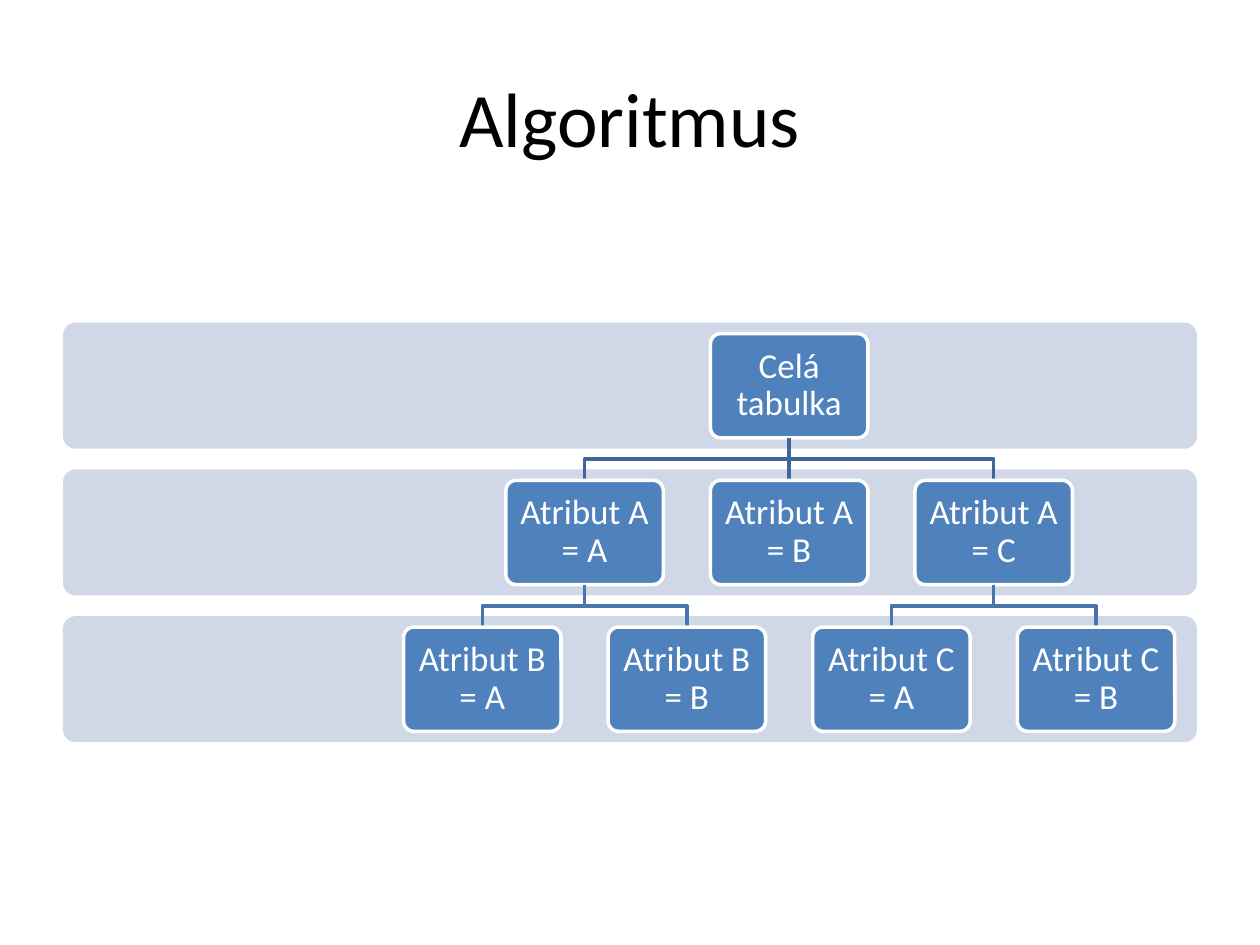
from lxml.etree import SubElement
from pptx import Presentation
from pptx.dml.color import RGBColor
from pptx.enum.shapes import MSO_CONNECTOR, MSO_SHAPE
from pptx.enum.text import MSO_ANCHOR, PP_ALIGN
from pptx.oxml.ns import qn
from pptx.util import Pt

TITLE = "Algoritmus"
NODES = [
    {"text": "Celá tabulka", "level": 0, "column": 1.5, "parent": None},
    {"text": "Atribut A = A", "level": 1, "column": 0.5, "parent": "Celá tabulka"},
    {"text": "Atribut B = A", "level": 2, "column": 0, "parent": "Atribut A = A"},
    {"text": "Atribut B = B", "level": 2, "column": 1, "parent": "Atribut A = A"},
    {"text": "Atribut A = B", "level": 1, "column": 1.5, "parent": "Celá tabulka"},
    {"text": "Atribut A = C", "level": 1, "column": 2.5, "parent": "Celá tabulka"},
    {"text": "Atribut C = A", "level": 2, "column": 2, "parent": "Atribut A = C"},
    {"text": "Atribut C = B", "level": 2, "column": 3, "parent": "Atribut A = C"},
]
LINK_COLORS = ["3F6797", "4875AC"]
LEVELS = 3
BAND_LEFT, BAND_TOP, BAND_WIDTH, BAND_HEIGHT = 36, 184.4, 648, 72
LEVEL_STEP = 83.85
NODE_WIDTH, NODE_HEIGHT = 90, 59.6
FIRST_CENTER, COLUMN_STEP = 275.6, 116.9
FRAME_FORMAT = {
    "word_wrap": True, "vertical_anchor": MSO_ANCHOR.MIDDLE,
    "margin_left": Pt(5.7), "margin_right": Pt(5.7),
    "margin_top": Pt(5.7), "margin_bottom": Pt(5.7),
}


def color(value):
    return RGBColor.from_string(value)


def set_values(target, values):
    for name, value in values.items():
        setattr(target, name, value)


def write_text(frame, text, size, ink, spacing=None):
    para = frame.paragraphs[0]
    set_values(para, {"alignment": PP_ALIGN.CENTER, "line_spacing": spacing})
    span = para.add_run()
    span.text = text
    set_values(span.font, {"name": "Calibri", "size": Pt(size)})
    span.font.color.rgb = color(ink)


def style_line(line, ink):
    line.color.rgb = color(ink)
    line.width = Pt(2)


def add_rounded(page, left, top, width, height, fill):
    box = page.shapes.add_shape(
        MSO_SHAPE.ROUNDED_RECTANGLE, Pt(left), Pt(top), Pt(width), Pt(height))
    box.adjustments[0] = 0.1
    box.shadow.inherit = False
    box.fill.solid()
    box.fill.fore_color.rgb = color(fill)
    box.line.fill.background()
    return box


def add_node(page, node):
    left = FIRST_CENTER + node["column"] * COLUMN_STEP - NODE_WIDTH / 2
    top = BAND_TOP + node["level"] * LEVEL_STEP + (BAND_HEIGHT - NODE_HEIGHT) / 2
    box = add_rounded(page, left, top, NODE_WIDTH, NODE_HEIGHT, "4F81BD")
    style_line(box.line, "FFFFFF")
    set_values(box.text_frame, FRAME_FORMAT)
    write_text(box.text_frame, node["text"], 20, "FFFFFF", 0.9)
    return box


def add_straight_link(page, parent, child, ink):
    link = page.shapes.add_connector(MSO_CONNECTOR.STRAIGHT, 0, 0, 0, 0)
    link.begin_connect(parent, 2)
    link.end_connect(child, 0)
    SubElement(link._element.spPr, qn("a:effectLst"))
    style_line(link.line, ink)
    return link


def add_bent_link(page, parent, child, ink):
    start_x, end_x = (box.left + box.width // 2 for box in (parent, child))
    start_y, end_y = parent.top + parent.height, child.top
    middle_y = (start_y + end_y) // 2
    builder = page.shapes.build_freeform(start_x, start_y)
    builder.add_line_segments(
        [(start_x, middle_y), (end_x, middle_y), (end_x, end_y)], close=False)
    link = builder.convert_to_shape()
    link.fill.background()
    link.shadow.inherit = False
    style_line(link.line, ink)
    return link


def main():
    deck = Presentation()
    set_values(deck, {"slide_width": Pt(720), "slide_height": Pt(540)})
    page = deck.slides.add_slide(deck.slide_layouts[5])
    title = page.shapes.title
    set_values(title, {"left": Pt(36), "top": Pt(21.6), "width": Pt(648), "height": Pt(90)})
    title.text_frame.vertical_anchor = MSO_ANCHOR.MIDDLE
    write_text(title.text_frame, TITLE, 44, "000000")

    for level in reversed(range(LEVELS)):
        add_rounded(page, BAND_LEFT, BAND_TOP + level * LEVEL_STEP,
                    BAND_WIDTH, BAND_HEIGHT, "D0D8E8")

    placed = {}
    for node in NODES:
        box = add_node(page, node)
        placed[node["text"]] = (node, box)
        if node["parent"]:
            parent, parent_box = placed[node["parent"]]
            aligned = parent["column"] == node["column"]
            add_link = add_straight_link if aligned else add_bent_link
            link = add_link(page, parent_box, box, LINK_COLORS[parent["level"]])
            box._element.addprevious(link._element)

    deck.save("out.pptx")


if __name__ == "__main__":
    main()
